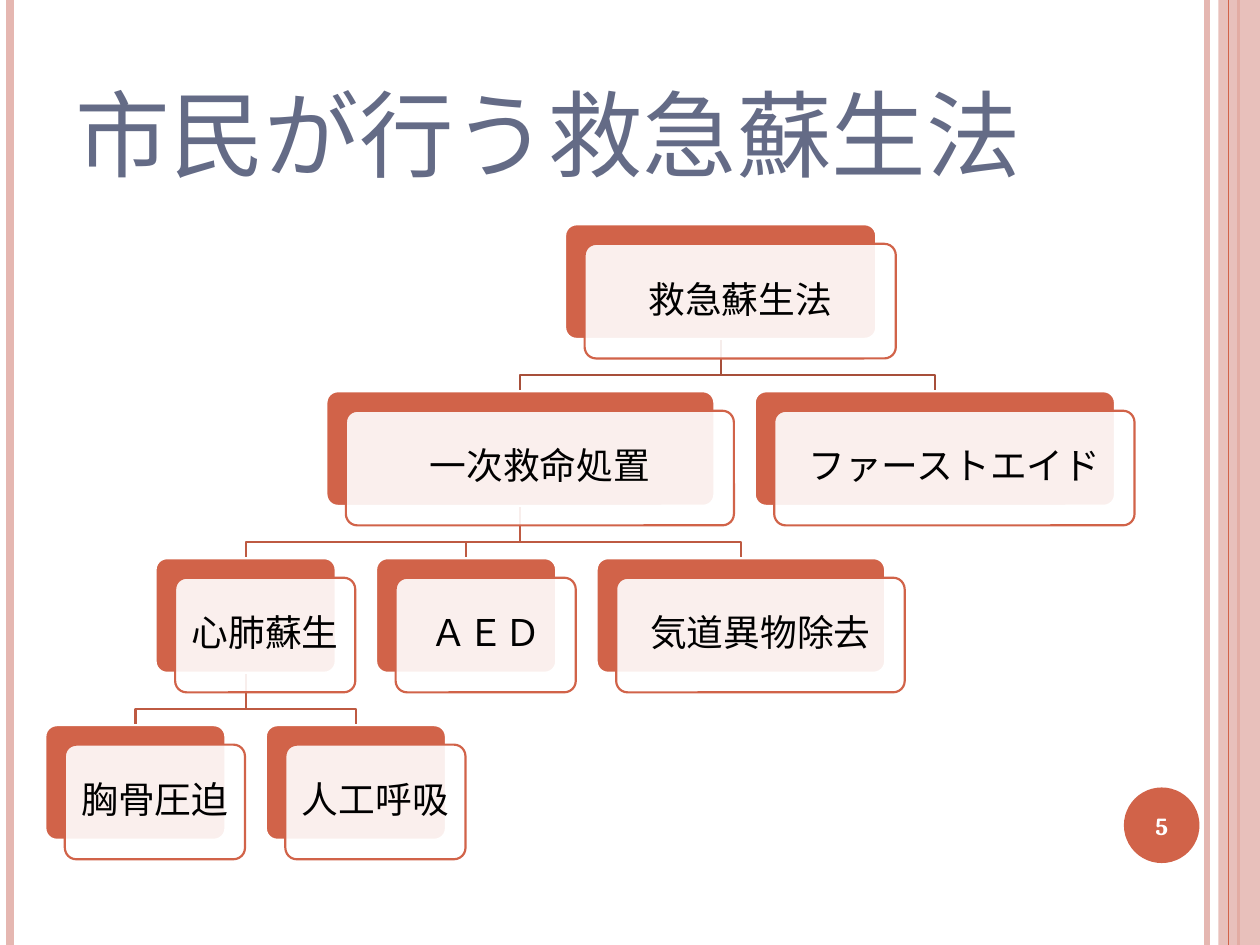
import lxml.etree
import pptx
import pptx.dml.color
import pptx.enum.shapes
import pptx.enum.text
import pptx.oxml.ns
import pptx.util
from collections import namedtuple
from dataclasses import dataclass

Inches = pptx.util.Inches
Pt = pptx.util.Pt
Shapes = pptx.enum.shapes.MSO_SHAPE
Align = pptx.enum.text.PP_ALIGN
Anchor = pptx.enum.text.MSO_ANCHOR
Box = namedtuple("Box", "left top width height")


@dataclass(frozen=True)
class Theme:
    font: str = "Cambria"
    accent: str = "D16349"
    pale: str = "E5B7B1"
    title: str = "646B86"
    upper_branch: str = "A74F3A"
    lower_branch: str = "BE5A42"
    white: str = "FFFFFF"
    black: str = "000000"
    title_size: float = 54
    card_size: float = 21
    number_size: float = 14
    outline: float = 1.25


THEME = Theme()
PAGE = Box(0, 0, 10, 7.5)
LEVELS = [
    [("救急蘇生法", 2.47)],
    [("一次救命処置", 3.08), ("ファーストエイド", 2.86)],
    [("心肺蘇生", 1.43), ("ＡＥＤ", 1.43), ("気道異物除去", 2.29)],
    [("胸骨圧迫", 1.43), ("人工呼吸", 1.43)],
]


def color(value):
    return pptx.dml.color.RGBColor.from_string(value)


def add_line(page, x, box, value, width):
    line = page.shapes.add_connector(
        pptx.enum.shapes.MSO_CONNECTOR.STRAIGHT,
        Inches(x), Inches(box.top), Inches(x), Inches(box.top + box.height))
    line.line.color.rgb = color(value)
    line.line.width = Pt(width)
    lxml.etree.SubElement(line._element.spPr, pptx.oxml.ns.qn("a:effectLst"))


def add_solid(page, kind, box, fill, outline=None, opacity=100):
    shape = page.shapes.add_shape(kind, *map(Inches, box))
    shape.shadow.inherit = False
    shape.fill.solid()
    shape.fill.fore_color.rgb = color(fill)
    if opacity < 100:
        tint = shape._element.spPr.find(".//" + pptx.oxml.ns.qn("a:srgbClr"))
        alpha = lxml.etree.SubElement(tint, pptx.oxml.ns.qn("a:alpha"))
        alpha.set("val", str(opacity * 1000))
    if outline:
        shape.line.color.rgb = color(outline)
        shape.line.width = Pt(THEME.outline)
    else:
        shape.line.fill.background()
    return shape


def write(shape, text, size, value, align, anchor, bold=False):
    frame = shape.text_frame
    frame.word_wrap = True
    frame.vertical_anchor = anchor
    para = frame.paragraphs[0]
    para.text = text
    para.alignment = align
    para.font.name = THEME.font
    para.font.size = Pt(size)
    para.font.bold = bold
    para.font.color.rgb = color(value)
    return para


def draw_frame(page, box):
    right = box.left + box.width
    add_line(page, right - 0.42, box, THEME.pale, 3)
    add_line(page, box.left + 0.08, box, THEME.pale, 4.5)
    add_line(page, right - 0.17, box, THEME.accent, 1.5)
    band = Box(right - 0.33, box.top, 0.33, box.height)
    add_solid(page, Shapes.RECTANGLE, band, THEME.pale, opacity=87)
    add_line(page, right - 0.25, box, THEME.accent, 0.75)


def draw_title(page, box, text):
    title = page.shapes.title
    title.left, title.top, title.width, title.height = map(Inches, box)
    write(title, text, THEME.title_size, THEME.title, Align.LEFT, Anchor.BOTTOM)


def draw_number(page, box, number):
    disc = add_solid(page, Shapes.OVAL, box, THEME.accent)
    frame = disc.text_frame
    frame.margin_left = frame.margin_right = 0
    write(disc, number, THEME.number_size, THEME.white, Align.CENTER, Anchor.MIDDLE, True)


def draw_card(page, box, text, offset):
    back = add_solid(page, Shapes.ROUNDED_RECTANGLE, box, THEME.accent, THEME.white)
    front_box = box._replace(left=box.left + offset, top=box.top + offset)
    front = add_solid(page, Shapes.ROUNDED_RECTANGLE, front_box,
                      THEME.white, THEME.accent, 90)
    for card in (back, front):
        card.adjustments[0] = 0.1
    frame = front.text_frame
    frame.margin_left = frame.margin_right = Inches(0.09)
    frame.margin_top = frame.margin_bottom = Inches(0.09)
    para = write(front, text, THEME.card_size, THEME.black, Align.CENTER, Anchor.MIDDLE)
    para.line_spacing = 0.9


def draw_branch(page, parent, child, value):
    start = parent.left + parent.width / 2
    end = child.left + child.width / 2
    bend = child.top - 0.13
    points = [(start, bend), (end, bend), (end, child.top)]
    builder = page.shapes.build_freeform(
        Inches(start), Inches(parent.top + parent.height), scale=1.0)
    builder.add_line_segments([tuple(map(Inches, point)) for point in points], close=False)
    branch = builder.convert_to_shape()
    branch.shadow.inherit = False
    branch.fill.background()
    branch.line.color.rgb = color(value)
    branch.line.width = Pt(THEME.outline)


def place_levels(box, levels, gap, pitch, height):
    rows = []
    center = None
    for depth in reversed(range(len(levels))):
        left = box.left if center is None else center - levels[depth][0][1] / 2
        row = []
        for _, width in levels[depth]:
            row.append(Box(left, box.top + depth * pitch, width, height))
            left += width + gap
        center = (row[0].left + row[-1].left + row[-1].width) / 2
        rows.insert(0, row)
    return rows


def draw_tree(page, box, levels):
    offset, height = 0.155, 0.91
    pitch = (box.height - height - offset) / (len(levels) - 1)
    rows = place_levels(box, levels, 0.32, pitch, height)
    for depth, (upper, lower) in enumerate(zip(rows, rows[1:])):
        value = THEME.lower_branch if depth else THEME.upper_branch
        for child in lower:
            draw_branch(page, upper[0], child, value)
    for level, row in zip(levels, rows):
        for (text, _), card in zip(level, row):
            draw_card(page, card, text, offset)


def main():
    deck = pptx.Presentation()
    deck.slide_width, deck.slide_height = Inches(PAGE.width), Inches(PAGE.height)
    page = deck.slides.add_slide(deck.slide_layouts[5])
    draw_frame(page, PAGE)
    draw_title(page, Box(0.5, 0.3, 8.28, 1.25), "市民が行う救急蘇生法")
    draw_tree(page, Box(0.36, 1.78, 8.65, 5.04), LEVELS)
    draw_number(page, Box(8.92, 6.25, 0.6, 0.6), "5")
    deck.save("out.pptx")


if __name__ == "__main__":
    main()
